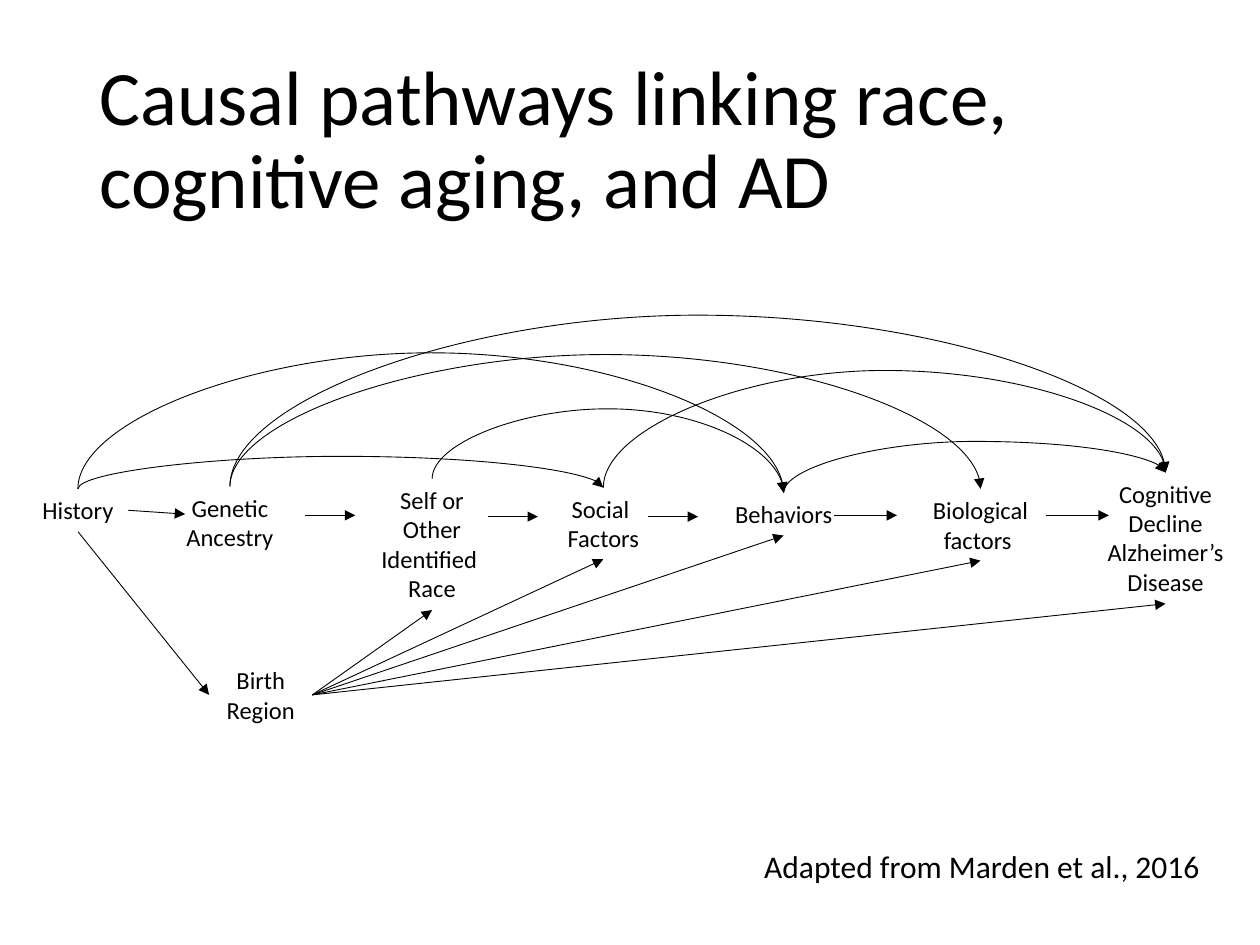
from lxml import etree
from pptx import Presentation
from pptx import util as u
from pptx.dml.color import RGBColor
from pptx.enum import shapes, text
from pptx.oxml.ns import qn

BLACK = "000000"
ALIGN = text.PP_ALIGN


def color(value):
    return RGBColor.from_string(value)


class Diagram:
    font = "Calibri"
    line_width = 0.5

    def __init__(self, page):
        self.page = page

    def fill_text(self, box, content, size, align):
        frame = box.text_frame
        frame.word_wrap = True
        frame.text = content
        for para in frame.paragraphs:
            para.alignment = align
            for span in para.runs:
                span.font.name = self.font
                span.font.size = u.Pt(size)
                span.font.color.rgb = color(BLACK)
        return frame

    def title(self, content, left, top, width, height):
        box = self.page.shapes.title
        box.left, box.top, box.width, box.height = map(u.Pt, (left, top, width, height))
        frame = self.fill_text(box, content, 44, ALIGN.LEFT)
        frame.auto_size = text.MSO_AUTO_SIZE.NONE
        frame.vertical_anchor = text.MSO_ANCHOR.MIDDLE
        frame.paragraphs[0].line_spacing = 0.9

    def label(self, content, left, top, width, height, size=14, align=ALIGN.CENTER):
        box = self.page.shapes.add_textbox(*map(u.Pt, (left, top, width, height)))
        frame = self.fill_text(box, content, size, align)
        frame.auto_size = text.MSO_AUTO_SIZE.SHAPE_TO_FIT_TEXT

    def arrow(self, start, end, kind=shapes.MSO_CONNECTOR.STRAIGHT):
        connector = self.page.shapes.add_connector(kind, *map(u.Pt, (*start, *end)))
        connector.line.color.rgb = color(BLACK)
        connector.line.width = u.Pt(self.line_width)
        properties = connector._element.spPr
        etree.SubElement(properties.find(qn("a:ln")), qn("a:tailEnd"), type="triangle")
        etree.SubElement(properties, qn("a:effectLst"))
        return connector

    def arc(self, start, end, peak):
        (x1, y1), (x2, y2) = start, end
        middle_x, middle_y = (x1 + x2) / 2, (y1 + y2) / 2
        half_rise, half_span = (y1 - y2) / 2, (x2 - x1) / 2
        connector = self.arrow(
            (middle_x - half_rise, middle_y - half_span),
            (middle_x + half_rise, middle_y + half_span),
            shapes.MSO_CONNECTOR.CURVE,
        )
        properties = connector._element.spPr
        properties.find(qn("a:xfrm")).set("rot", str(270 * 60000))
        guides = properties.find(qn("a:prstGeom")).get_or_add_avLst()
        bend = round((y1 - peak) / (y1 - y2) * 100000)
        etree.SubElement(guides, qn("a:gd"), name="adj1", fmla=f"val {bend}")


FACTORS = {
    "birth": ("Birth Region", 119.5, 376.6, 59, 41),
    "ancestry": ("Genetic Ancestry", 97.2, 278, 68.4, 41),
    "history": ("History", 15.4, 279.4, 58.3, 24.4),
    "race": ("Self or Other Identified \nRace", 206.2, 273.6, 81.4, 75),
    "social": ("Social \nFactors", 315.6, 278.6, 58.3, 41),
    "behaviors": ("Behaviors", 410.6, 281.6, 74.4, 24.4),
    "biological": ("Biological factors ", 523.2, 279.4, 74.2, 41),
    "decline": ("Cognitive Decline\nAlzheimer’s Disease", 625, 270, 82.1, 75),
}
SEQUENCE = [
    ((73.4, 291.6), (105.8, 293.8)),
    ((174.2, 294.5), (203, 294.5)),
    ((278.6, 295.2), (307.4, 295.2)),
    ((370.1, 295.2), (398.9, 295.2)),
    ((476.6, 294.5), (512.6, 294.5)),
    ((597.6, 294.5), (633.6, 294.5)),
]
ARCS = [
    ("history", "social", 260.6),
    ("history", "behaviors", 202),
    ("ancestry", "decline", 180),
    ("race", "behaviors", 233.6),
    ("social", "decline", 211.6),
    ("behaviors", "decline", 252.2),
    ("ancestry", "biological", 202),
]


def top_of(name):
    _, left, top, width, _ = FACTORS[name]
    return left + width / 2, top


def bottom_of(name):
    _, left, top, width, height = FACTORS[name]
    return left + width / 2, top + height


def main():
    deck = Presentation()
    deck.slide_width, deck.slide_height = u.Pt(720), u.Pt(540)
    diagram = Diagram(deck.slides.add_slide(deck.slide_layouts[5]))
    diagram.title("Causal pathways linking race, cognitive aging, and AD", 49.5, 28.8, 621, 104.4)
    for factor in FACTORS.values():
        diagram.label(*factor)
    for start, end in SEQUENCE:
        diagram.arrow(start, end)

    _, left, top, width, height = FACTORS["birth"]
    birth_middle = top + height / 2
    diagram.arrow(bottom_of("history"), (left, birth_middle))
    for name in ("race", "social", "behaviors", "biological", "decline"):
        diagram.arrow((left + width, birth_middle), bottom_of(name))
    for source, target, peak in ARCS:
        diagram.arc(top_of(source), top_of(target), peak)

    diagram.label("Adapted from Marden et al., 2016", 416.9, 480.2, 275.8, 29, 18, ALIGN.RIGHT)
    deck.save("out.pptx")


if __name__ == "__main__":
    main()
